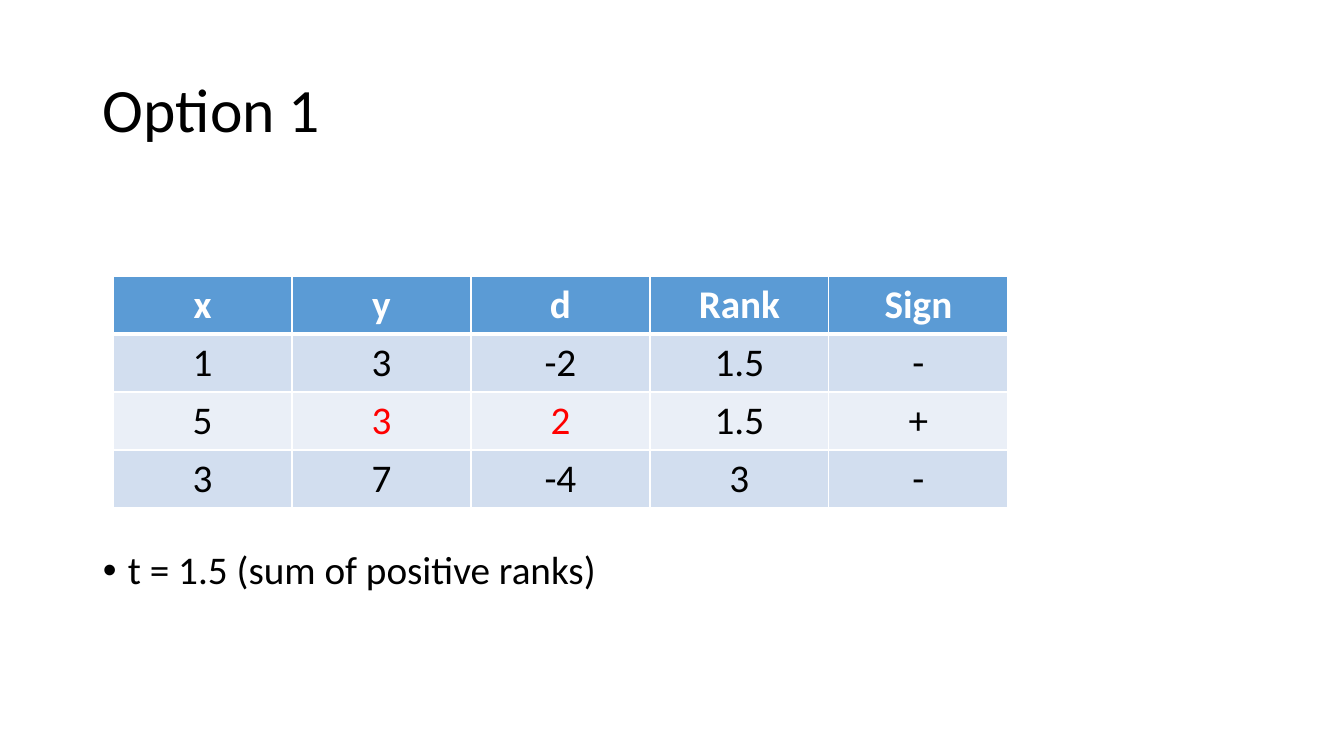
from lxml import etree
from pptx import Presentation
from pptx.dml.color import RGBColor
from pptx.enum.text import MSO_ANCHOR, PP_ALIGN
from pptx.oxml.ns import qn
from pptx.util import Pt

MIDDLE, TOP = MSO_ANCHOR.MIDDLE, MSO_ANCHOR.TOP
LEFT, CENTER = PP_ALIGN.LEFT, PP_ALIGN.CENTER

BLACK = RGBColor(0x00, 0x00, 0x00)
WHITE = RGBColor(0xFF, 0xFF, 0xFF)
RED = RGBColor(0xFF, 0x00, 0x00)
HEADER_BLUE = RGBColor(0x5B, 0x9B, 0xD5)
BAND_DARK = RGBColor(0xD2, 0xDE, 0xEF)
BAND_LIGHT = RGBColor(0xEA, 0xEF, 0xF7)

EMU_PER_INCH = 914400
PX_PER_INCH = 100.8
BULLET_INDENT = 25
THIN, THICK = Pt(1), Pt(3)

RANK_ROWS = [
    ["x", "y", "d", "Rank", "Sign"],
    ["1", "3", "-2", "1.5", "-"],
    ["5", "3", "2", "1.5", "+"],
    ["3", "7", "-4", "3", "-"],
]
RED_CELLS = {(2, 1), (2, 2)}


def px(length):
    return round(length * EMU_PER_INCH / PX_PER_INCH)


class SlideBuilder:
    font_name = "Calibri"
    line_spacing = 0.9

    def __init__(self, deck):
        self.slide = deck.slides.add_slide(deck.slide_layouts[6])

    def add_span(self, para, text, size, color=BLACK, bold=False, align=LEFT):
        para.alignment = align
        span = para.add_run()
        span.text = text
        span.font.color.rgb = color
        formats = {"name": self.font_name, "size": Pt(size), "bold": bold}
        for name, value in formats.items():
            setattr(span.font, name, value)

    def text(self, area, text, size, anchor=TOP, bullet=False):
        box = self.slide.shapes.add_textbox(*map(px, area))
        frame = box.text_frame
        for name, value in {"word_wrap": True, "vertical_anchor": anchor}.items():
            setattr(frame, name, value)
        para = frame.paragraphs[0]
        para.line_spacing = self.line_spacing
        self.add_span(para, text, size)
        if bullet:
            self.bullet(para)

    def bullet(self, para):
        properties = para._p.get_or_add_pPr()
        properties.set("marL", str(px(BULLET_INDENT)))
        properties.set("indent", str(-px(BULLET_INDENT)))
        etree.SubElement(properties, qn("a:buFont"), typeface="Arial")
        etree.SubElement(properties, qn("a:buChar"), char="•")

    def borders(self, cell, widths):
        properties = cell._tc.get_or_add_tcPr()
        for side, width in widths.items():
            line = etree.SubElement(properties, qn(f"a:ln{side}"), w=str(width))
            fill = etree.SubElement(line, qn("a:solidFill"))
            etree.SubElement(fill, qn("a:srgbClr"), val=str(WHITE))

    def table(self, left, top, column_width, row_height, rows, red_cells, size):
        row_count, column_count = len(rows), len(rows[0])
        area = (left, top, column_width * column_count, row_height * row_count)
        table = self.slide.shapes.add_table(row_count, column_count, *map(px, area)).table
        for column in table.columns:
            column.width = px(column_width)
        for row_index, values in enumerate(rows):
            table.rows[row_index].height = px(row_height)
            header = row_index == 0
            fill = HEADER_BLUE if header else BAND_DARK if row_index % 2 else BAND_LIGHT
            widths = {
                "L": THIN,
                "R": THIN,
                "T": THICK if row_index == 1 else THIN,
                "B": THICK if header else THIN,
            }
            for column_index, value in enumerate(values):
                cell = table.cell(row_index, column_index)
                self.borders(cell, widths)
                cell.fill.solid()
                cell.fill.fore_color.rgb = fill
                is_red = (row_index, column_index) in red_cells
                color = WHITE if header else RED if is_red else BLACK
                self.add_span(cell.text_frame.paragraphs[0], value, size, color, header, CENTER)


def main():
    deck = Presentation()
    deck.slide_width, deck.slide_height = px(1344), px(756)
    page = SlideBuilder(deck)
    page.text((93, 40, 1159, 146), "Option 1", 44, anchor=MIDDLE)
    page.text((93, 546, 1159, 136), "t = 1.5 (sum of positive ranks)", 28, bullet=True)
    page.table(113, 276, 179, 58, RANK_ROWS, RED_CELLS, 28)
    deck.save("out.pptx")


if __name__ == "__main__":
    main()
